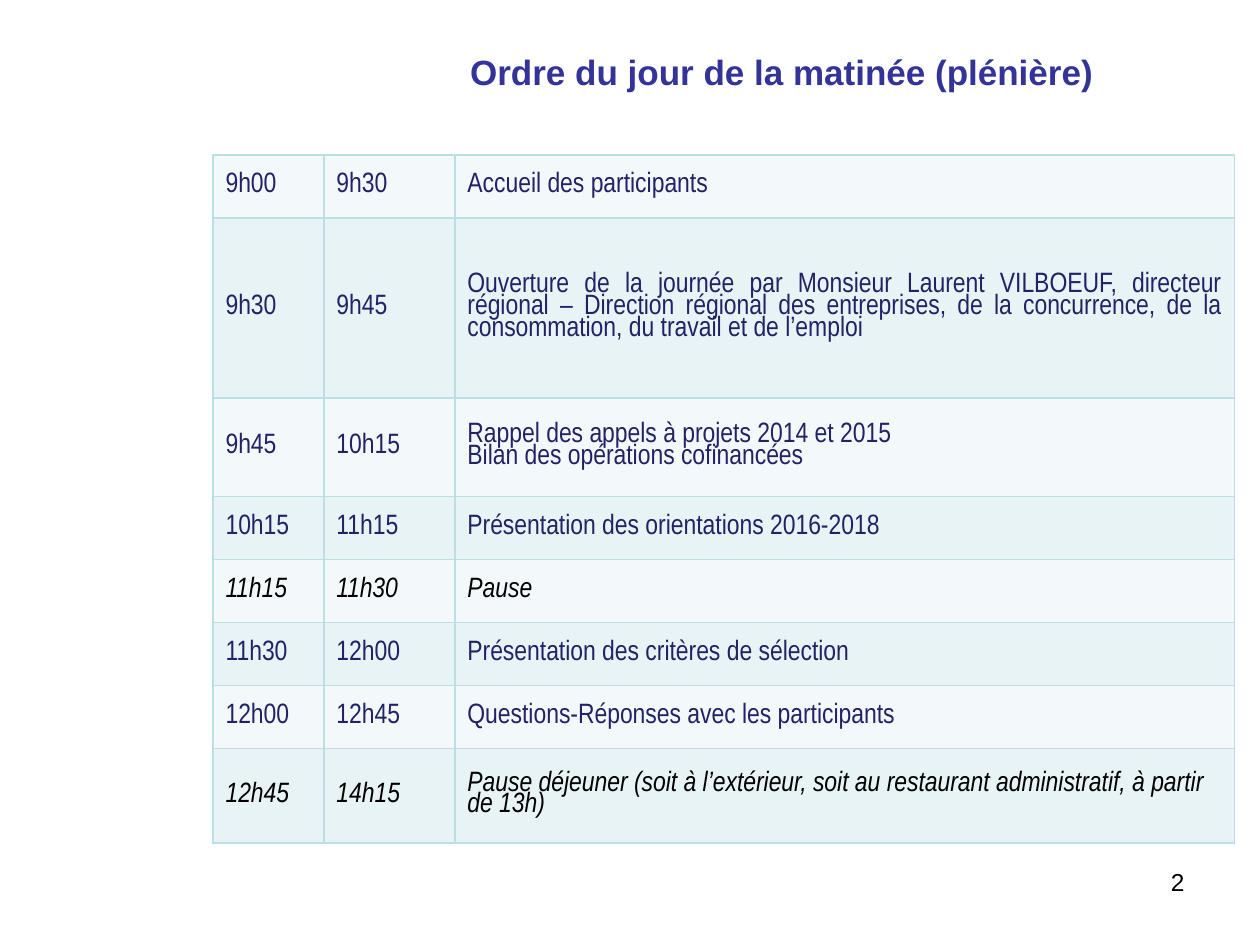
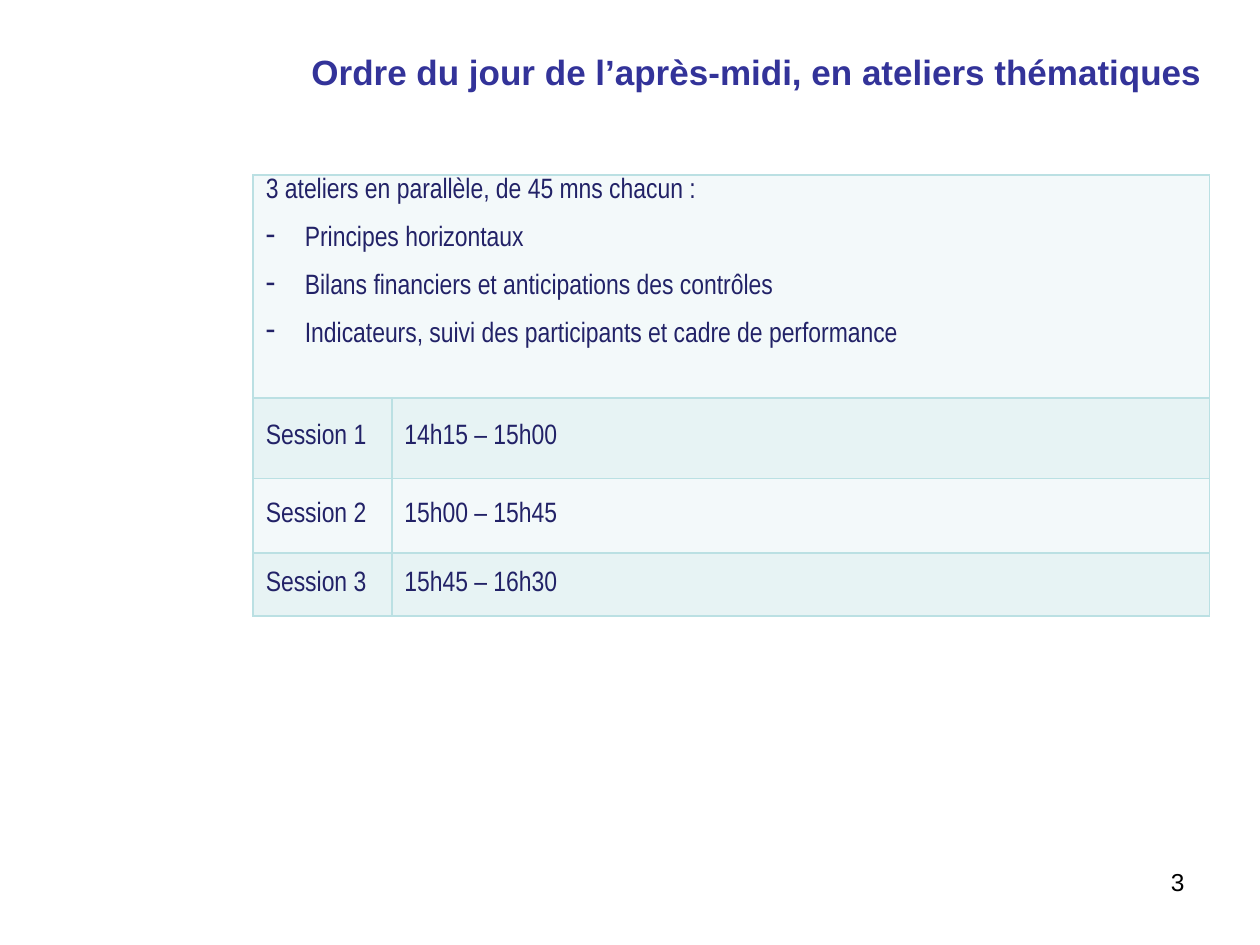
from lxml.etree import SubElement
from pptx import Presentation
from pptx.dml.color import RGBColor
from pptx.enum.text import MSO_ANCHOR, PP_ALIGN
from pptx.oxml.ns import qn
from pptx.util import Inches, Pt

TITLE_BLUE = RGBColor(0x33, 0x33, 0x99)
TEXT_BLUE = RGBColor(0x22, 0x22, 0x67)
BLACK = RGBColor(0, 0, 0)
BORDER = RGBColor(0xBB, 0xE0, 0xE3)
BAND_FILLS = [RGBColor(0xF3, 0xF9, 0xFA), RGBColor(0xE7, 0xF3, 0xF4)]

MORNING = [
    ("9h00", "9h30", "Accueil des participants"),
    ("9h30", "9h45", "Ouverture de la journée par Monsieur Laurent VILBOEUF, "
     "directeur régional – Direction régional des entreprises, de la "
     "concurrence, de la consommation, du travail et de l’emploi"),
    ("9h45", "10h15", "Rappel des appels à projets 2014 et 2015\n"
     "Bilan des opérations cofinancées"),
    ("10h15", "11h15", "Présentation des orientations 2016-2018"),
    ("11h15", "11h30", "Pause"),
    ("11h30", "12h00", "Présentation des critères de sélection"),
    ("12h00", "12h45", "Questions-Réponses avec les participants"),
    ("12h45", "14h15", "Pause déjeuner (soit à l’extérieur, soit au "
     "restaurant administratif, à partir de 13h)"),
]
AFTERNOON = [
    ("3 ateliers en parallèle, de 45 mns chacun :\n"
     "Principes horizontaux\n"
     "Bilans financiers et anticipations des contrôles\n"
     "Indicateurs, suivi des participants et cadre de performance", ""),
    ("Session 1", "14h15 – 15h00"),
    ("Session 2", "15h00 – 15h45"),
    ("Session 3", "15h45 – 16h30"),
]

presentation = Presentation()
presentation.slide_width = Inches(10)
presentation.slide_height = Inches(7.5)


def add_agenda_slide(number, title_text, title_width):
    """Add a slide with its title and page number."""
    slide = presentation.slides.add_slide(presentation.slide_layouts[5])
    title = slide.shapes.title
    title.left, title.top = Inches(2.24), Inches(0.29)
    title.width, title.height = Inches(title_width), Inches(0.55)
    title.text_frame.vertical_anchor = MSO_ANCHOR.MIDDLE
    page = slide.shapes.add_textbox(
        Inches(7.17), Inches(6.83), Inches(2.33), Inches(0.52))
    for shape, text, size, color, bold in [
            (title, title_text, 20, TITLE_BLUE, True),
            (page, str(number), 14, BLACK, False)]:
        shape.text_frame.word_wrap = True
        paragraph = shape.text_frame.paragraphs[0]
        paragraph.text = text
        paragraph.alignment = PP_ALIGN.RIGHT
        font = paragraph.font
        font.name, font.size, font.bold = "Arial", Pt(size), bold
        font.color.rgb = color
    return slide


def add_agenda_table(slide, rows, left, top, column_widths, row_heights):
    """Add a banded table; breaks are black italic, the last column justified."""
    table = slide.shapes.add_table(
        len(rows), len(column_widths), Inches(left), Inches(top),
        Inches(sum(column_widths)), Inches(sum(row_heights))).table
    table.first_row = table.horz_banding = False
    for column, width in zip(table.columns, column_widths):
        column.width = Inches(width)
    for row_index, (texts, height) in enumerate(zip(rows, row_heights)):
        table.rows[row_index].height = Inches(height)
        is_break = texts[-1].startswith("Pause")
        for column_index, text in enumerate(texts):
            cell = table.cell(row_index, column_index)
            cell.vertical_anchor = MSO_ANCHOR.MIDDLE
            properties = cell._tc.get_or_add_tcPr()
            for side in ("a:lnL", "a:lnR", "a:lnT", "a:lnB"):
                line = SubElement(properties, qn(side), w=str(Pt(1)))
                fill = SubElement(line, qn("a:solidFill"))
                SubElement(fill, qn("a:srgbClr"), val=str(BORDER))
            cell.fill.solid()
            cell.fill.fore_color.rgb = BAND_FILLS[row_index % 2]
            cell.text = text
            justified = column_index == len(texts) - 1 and not is_break
            for paragraph in cell.text_frame.paragraphs:
                paragraph.alignment = (
                    PP_ALIGN.JUSTIFY if justified else PP_ALIGN.LEFT)
                paragraph.line_spacing = 0.82
                font = paragraph.font
                font.name, font.size, font.italic = "Arial Narrow", Pt(16), is_break
                font.color.rgb = BLACK if is_break else TEXT_BLUE
    return table


# Morning
slide = add_agenda_slide(2, "Ordre du jour de la matinée (plénière)", 6.54)
add_agenda_table(slide, MORNING, 1.69, 1.23, [0.88, 1.04, 6.19],
                 [0.5, 1.43, 0.78, 0.5, 0.5, 0.5, 0.5, 0.75])

# Afternoon
slide = add_agenda_slide(
    3, "Ordre du jour de l’après-midi, en ateliers thématiques", 7.4)
table = add_agenda_table(slide, AFTERNOON, 2.01, 1.39, [1.1, 6.49],
                         [1.77, 0.64, 0.59, 0.5])
workshops = table.cell(0, 0)
workshops.merge(table.cell(0, 1))
workshops.vertical_anchor = MSO_ANCHOR.TOP
for paragraph in workshops.text_frame.paragraphs[1:]:
    paragraph.space_before = Pt(15)
    properties = paragraph._p.get_or_add_pPr()
    properties.set("marL", str(Inches(0.31)))
    properties.set("indent", str(-Inches(0.31)))
    bullet = SubElement(properties, qn("a:buChar"), char="-")
    properties.find(qn("a:defRPr")).addprevious(bullet)

presentation.save("out.pptx")
